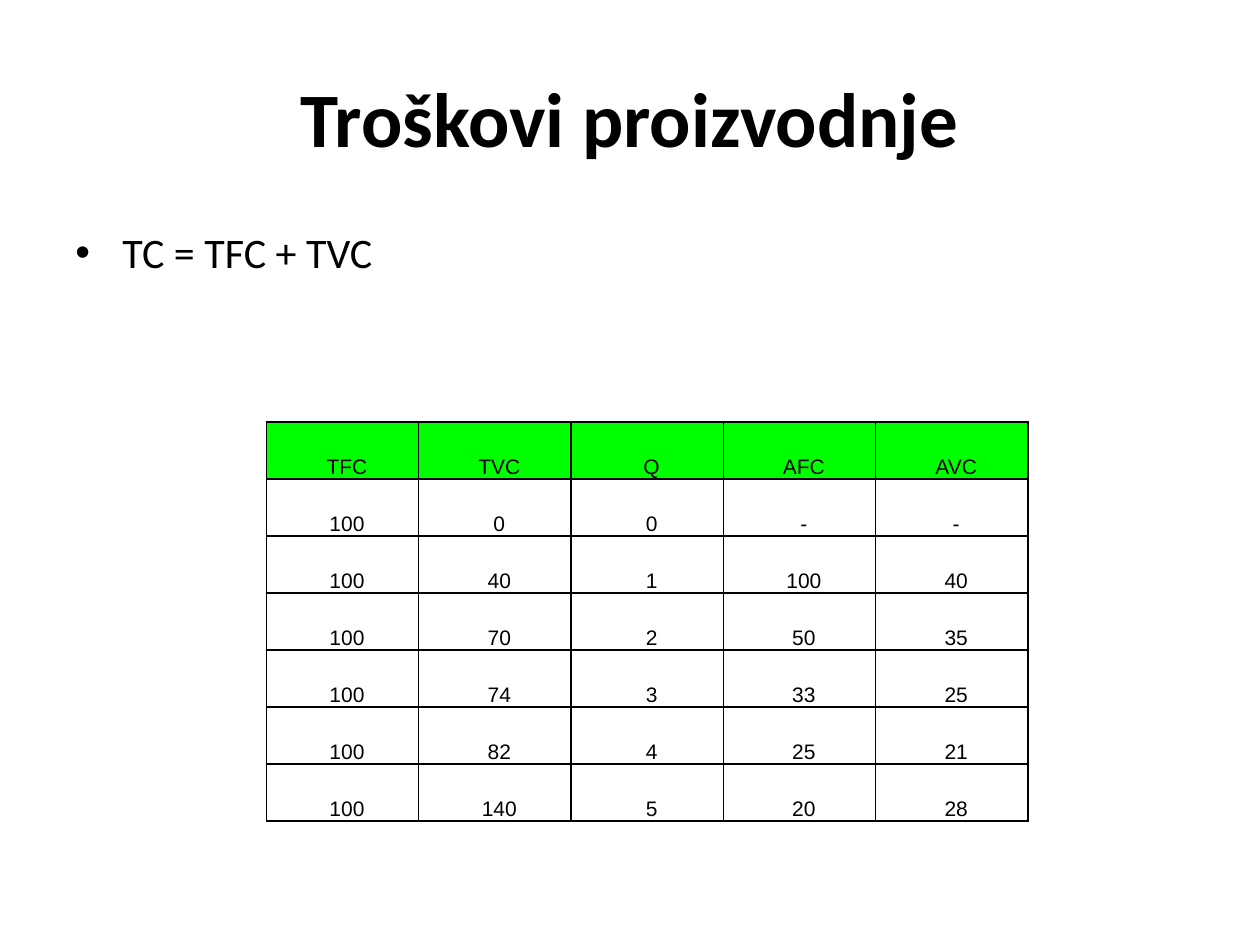
from lxml import etree
from pptx import Presentation
from pptx.dml.color import RGBColor
from pptx.enum.text import MSO_ANCHOR, PP_ALIGN
from pptx.oxml.ns import qn
from pptx.util import Cm, Pt

CENTER = PP_ALIGN.CENTER
MIDDLE, BOTTOM, TOP = MSO_ANCHOR.MIDDLE, MSO_ANCHOR.BOTTOM, MSO_ANCHOR.TOP
COLORS = {"ink": "000000", "head": "00FF00"}
COSTS = [
    ("TFC", "TVC", "Q", "AFC", "AVC"),
    ("100", "0", "0", "-", "-"),
    ("100", "40", "1", "100", "40"),
    ("100", "70", "2", "50", "35"),
    ("100", "74", "3", "33", "25"),
    ("100", "82", "4", "25", "21"),
    ("100", "140", "5", "20", "28"),
]


def color(name):
    return RGBColor.from_string(COLORS[name])


def style(para, font, size, bold=False):
    for run in para.runs:
        run.font.name = font
        run.font.size = Pt(size)
        run.font.bold = bold
        run.font.color.rgb = color("ink")


def add_text(slide, text, top, height, anchor, size, bold=False):
    """Add a text box across the slide and return its paragraph."""
    box = slide.shapes.add_textbox(Cm(1.27), Cm(top), Cm(22.86), Cm(height))
    frame = box.text_frame
    frame.word_wrap = True
    frame.vertical_anchor = anchor
    frame.text = text
    para = frame.paragraphs[0]
    style(para, "Calibri", size, bold)
    return para


def add_bullet(para, indent):
    props = para._p.get_or_add_pPr()
    props.set("marL", str(indent))
    props.set("indent", str(-indent))
    etree.SubElement(props, qn("a:buFont"), typeface="Arial")
    etree.SubElement(props, qn("a:buChar"), char="•")


def add_border(cell):
    props = cell._tc.get_or_add_tcPr()
    for i, side in enumerate(("lnL", "lnR", "lnT", "lnB")):
        line = etree.Element(qn("a:" + side), w=str(Pt(1)))
        fill = etree.SubElement(line, qn("a:solidFill"))
        etree.SubElement(fill, qn("a:srgbClr"), val=COLORS["ink"])
        props.insert(i, line)


def fill_cell(cell, text, head):
    cell.margin_left = cell.margin_top = Cm(0.18)
    cell.margin_right = cell.margin_bottom = 0
    cell.vertical_anchor = BOTTOM
    cell.text_frame.text = text
    para = cell.text_frame.paragraphs[0]
    para.alignment = CENTER
    para.line_spacing = 1.5
    style(para, "Arial", 12)
    if head:
        cell.fill.solid()
        cell.fill.fore_color.rgb = color("head")
    else:
        cell.fill.background()
    add_border(cell)


def add_costs(slide):
    rows, cols = len(COSTS), len(COSTS[0])
    table = slide.shapes.add_table(
        rows, cols, Cm(5.37), Cm(8.51), Cm(3.07 * cols), Cm(1.15 * rows)
    ).table
    table.horz_banding = False
    for r, values in enumerate(COSTS):
        for c, text in enumerate(values):
            fill_cell(table.cell(r, c), text, head=r == 0)


def main():
    deck = Presentation()
    deck.slide_width, deck.slide_height = Cm(25.4), Cm(19.05)
    slide = deck.slides.add_slide(deck.slide_layouts[6])
    title = add_text(slide, "Troškovi proizvodnje", 0.76, 3.18, MIDDLE, 44, True)
    title.alignment = CENTER
    sum_line = add_text(slide, "TC = TFC + TVC", 4.45, 12.57, TOP, 24)
    sum_line.space_before = Pt(7.7)
    add_bullet(sum_line, Cm(0.95))
    add_costs(slide)
    deck.save("out.pptx")


if __name__ == "__main__":
    main()
